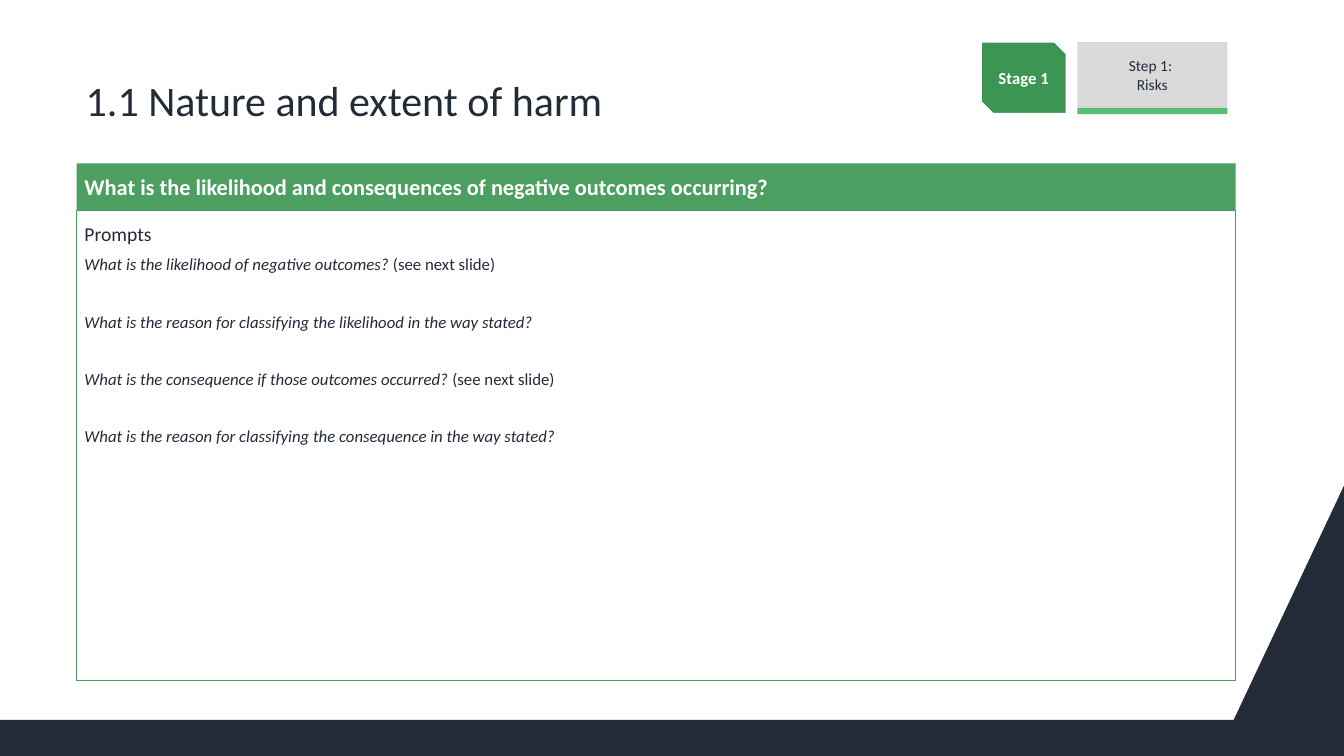
import pptx
import pptx.dml.color
import pptx.enum.shapes
import pptx.enum.text
import pptx.util

Cm = pptx.util.Cm
Pt = pptx.util.Pt
SHAPES = pptx.enum.shapes.MSO_SHAPE
ALIGN = pptx.enum.text.PP_ALIGN
ANCHOR = pptx.enum.text.MSO_ANCHOR

NAVY, WHITE, GREY = "232B39", "FFFFFF", "D9D9D9"
GREEN, STAGE_GREEN, BAR_GREEN = "4C9E61", "3C9653", "5BBD74"
SEE_NEXT = "(see next slide)"
PROMPTS = [
    ("What is the likelihood of negative outcomes? ", SEE_NEXT),
    ("What is the reason for classifying the likelihood in the way stated?", ""),
    ("What is the consequence if those outcomes occurred? ", SEE_NEXT),
    ("What is the reason for classifying the consequence in the way stated?", ""),
]


def colour(value):
    """Return the colour for a hex string."""
    return pptx.dml.color.RGBColor.from_string(value)


def apply(target, values):
    """Set each named attribute on the target."""
    for name, value in values.items():
        setattr(target, name, value)


def paint(shape, fill=None, line=None, width=0.75):
    """Give a shape its fill and outline, without a shadow."""
    shape.shadow.inherit = False
    if fill:
        shape.fill.solid()
        shape.fill.fore_color.rgb = colour(fill)
    else:
        shape.fill.background()
    if line:
        shape.line.color.rgb = colour(line)
        shape.line.width = Pt(width)
    else:
        shape.line.fill.background()


def draw_box(page, kind, box, **look):
    """Add a painted preset shape in a box given in centimetres."""
    shape = page.shapes.add_shape(kind, *map(Cm, box))
    paint(shape, **look)
    return shape


def format_frame(shape, anchor=ANCHOR.MIDDLE, side=0.2, top=0.13):
    """Set the wrapping, anchor and insets of a text frame and return it."""
    frame = shape.text_frame
    apply(frame, {
        "word_wrap": True, "auto_size": pptx.enum.text.MSO_AUTO_SIZE.NONE,
        "vertical_anchor": anchor, "margin_left": Cm(side), "margin_right": Cm(side),
        "margin_top": Cm(top), "margin_bottom": Cm(0.13),
    })
    return frame


def write(para, text, size, ink=NAVY, align=ALIGN.LEFT, **style):
    """Add a formatted span to a paragraph, breaking at line ends."""
    para.alignment = align
    for number, line in enumerate(text.split("\n")):
        if number:
            para.add_line_break()
        span = para.add_run()
        span.text = line
        apply(span.font, {"name": "Calibri", "size": Pt(size), **style})
        span.font.color.rgb = colour(ink)


def draw_footer(page, width, height):
    """Draw the dark band that rises to a wedge at the right."""
    band, foot, tip = 18.14, 31.09, 12.24
    corners = [(0, band), (0, height), (width, height), (width, tip)]
    builder = page.shapes.build_freeform(Cm(foot), Cm(band))
    builder.add_line_segments([(Cm(x), Cm(y)) for x, y in corners])
    paint(builder.convert_to_shape(), fill=NAVY)


def draw_title(page, box, text):
    """Place and format the title."""
    title = page.shapes.title
    apply(title, dict(zip(("left", "top", "width", "height"), map(Cm, box))))
    write(format_frame(title).paragraphs[0], text, 30)


def draw_panel(page, box, question, prompts):
    """Draw the question bar above the outlined list of prompts."""
    left, top, width, height = box
    bar = 1.18
    body = draw_box(page, SHAPES.RECTANGLE, (left, top + bar, width, height - bar), line=GREEN)
    frame = format_frame(body, ANCHOR.TOP, top=0.3)
    write(frame.paragraphs[0], "Prompts", 14)
    for number, (prompt, hint) in enumerate(prompts):
        para = frame.add_paragraph()
        para.space_before = Pt(26.5 if number else 6)
        write(para, prompt, 12, italic=True)
        if hint:
            write(para, hint, 12, italic=False)
    header = draw_box(page, SHAPES.RECTANGLE, (left, top, width, bar), fill=GREEN)
    write(format_frame(header).paragraphs[0], question, 16, WHITE, bold=True)


def draw_tracker(page, box, stage, step):
    """Draw the stage badge and the step card beside it."""
    left, top, width, height = box
    badge_width, card_width, bar = 2.18, 3.78, 0.16
    badge = draw_box(page, SHAPES.SNIP_2_DIAG_RECTANGLE, (left, top, badge_width, height),
                     fill=STAGE_GREEN, line=WHITE, width=2)
    write(format_frame(badge, side=0.25).paragraphs[0], stage, 12, WHITE, ALIGN.CENTER, bold=True)
    card_left = left + width - card_width
    card = draw_box(page, SHAPES.RECTANGLE, (card_left, top + 0.02, card_width, height - bar - 0.02),
                    fill=GREY)
    write(format_frame(card, side=0.25).paragraphs[0], step, 11, align=ALIGN.CENTER)
    draw_box(page, SHAPES.RECTANGLE, (card_left, top + height - bar, card_width, bar),
             fill=BAR_GREEN)


def main():
    """Build the slide and save the deck."""
    width, height = 33.87, 19.05
    deck = pptx.Presentation()
    apply(deck, {"slide_width": Cm(width), "slide_height": Cm(height)})
    page = deck.slides.add_slide(deck.slide_layouts.get_by_name("Title Only"))
    draw_footer(page, width, height)
    draw_panel(page, (1.93, 4.12, 29.21, 13.03),
               "What is the likelihood and consequences of negative outcomes occurring?", PROMPTS)
    draw_title(page, (1.96, 1.24, 29.21, 2.57), "1.1 Nature and extent of harm")
    draw_tracker(page, (24.71, 1.04, 6.22, 1.84), "Stage 1", "Step 1: \nRisks")
    deck.save("out.pptx")


if __name__ == "__main__":
    main()
